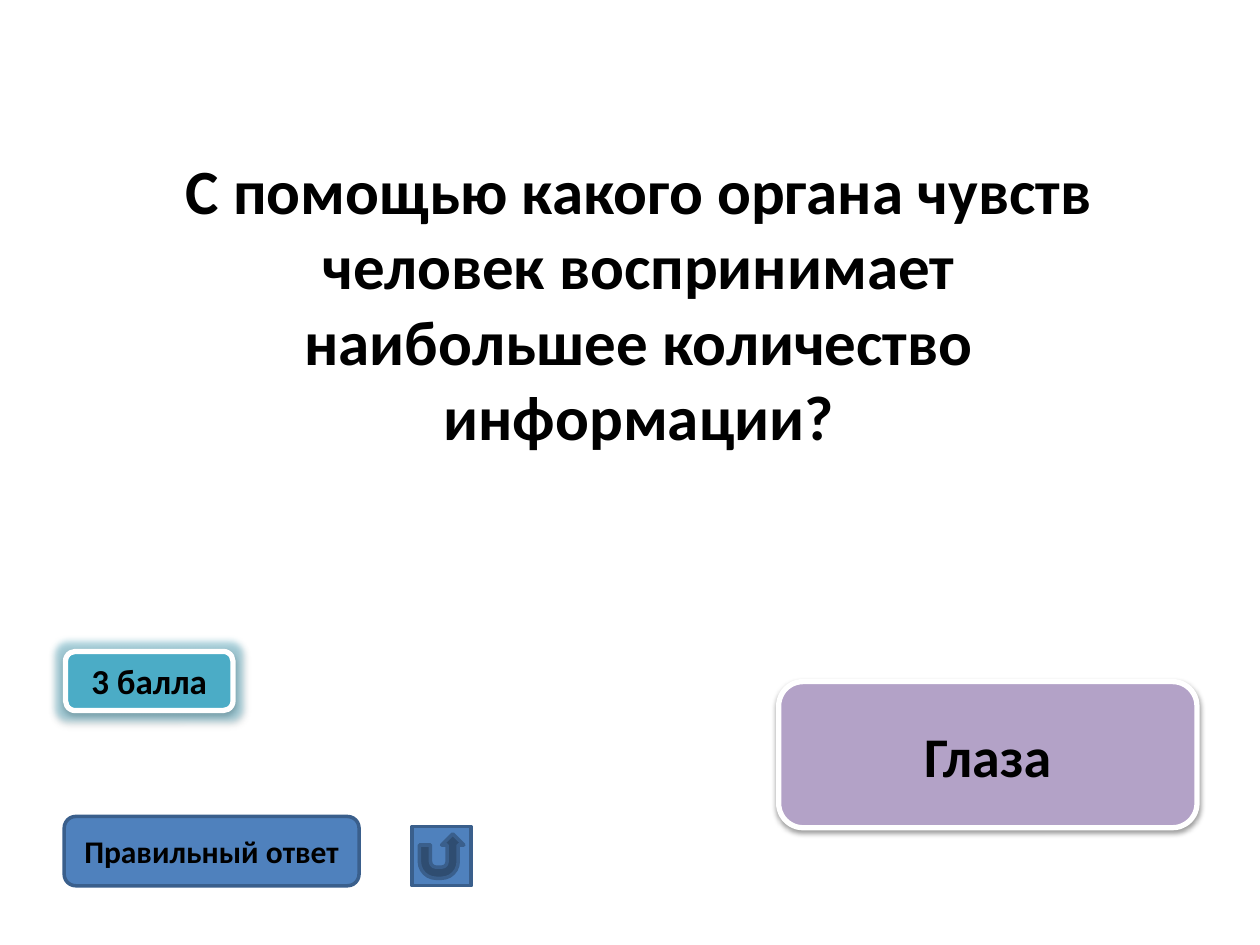
from lxml import etree
from pptx import Presentation
from pptx.dml.color import RGBColor
from pptx.enum import shapes, text
from pptx.oxml import ns
from pptx.util import Inches, Pt

BLACK = RGBColor(0, 0, 0)
WHITE = RGBColor(255, 255, 255)
BLUE = RGBColor(0x4F, 0x81, 0xBD)
NAVY = RGBColor(0x3A, 0x5F, 0x8C)
TEAL = RGBColor(0x4B, 0xAC, 0xC6)
LILAC = RGBColor(0xB3, 0xA2, 0xC7)
ROUND = shapes.MSO_SHAPE.ROUNDED_RECTANGLE
BACK = shapes.MSO_SHAPE.ACTION_BUTTON_RETURN


def write(shape, words, size):
    frame = shape.text_frame
    frame.word_wrap = True
    par = frame.paragraphs[0]
    par.alignment = text.PP_ALIGN.CENTER
    run = par.add_run()
    run.text = words
    for key, value in {"name": "Calibri", "size": Pt(size), "bold": True}.items():
        setattr(run.font, key, value)
    run.font.color.rgb = BLACK


def add_effect(shape, tag, color, alpha, **attrs):
    """Append a glow or shadow to the shape's effect list; glow goes first."""
    effects = shape._element.spPr.find(ns.qn("a:effectLst"))
    effect = etree.SubElement(effects, ns.qn(tag), attrs)
    tint = etree.SubElement(effect, ns.qn("a:srgbClr"), val=str(color))
    etree.SubElement(tint, ns.qn("a:alpha"), val=str(alpha * 1000))


prs = Presentation()
prs.slide_width, prs.slide_height = Inches(10), Inches(7.5)
slide = prs.slides.add_slide(prs.slide_layouts[6])

# kind, box, fill, line, line width, words, size, raised, glowing
parts = [
    (ROUND, (0.51, 6.48, 2.34, 0.55), BLUE, NAVY, 2, "Правильный ответ", 18, False, False),
    (BACK, (3.27, 6.56, 0.47, 0.47), BLUE, NAVY, 2, "", 18, False, False),
    (ROUND, (0.52, 5.17, 1.33, 0.47), TEAL, WHITE, 3, "3 балла", 20, True, True),
    (ROUND, (6.18, 5.41, 3.32, 1.16), LILAC, WHITE, 3, "Глаза", 32, True, False),
]
for kind, box, fill, edge, width, words, size, raised, glowing in parts:
    shape = slide.shapes.add_shape(kind, *map(Inches, box))
    shape.shadow.inherit = False
    shape.fill.solid()
    shape.fill.fore_color.rgb = fill
    shape.line.color.rgb = edge
    shape.line.width = Pt(width)
    if glowing:
        add_effect(shape, "a:glow", fill, 40, rad=str(Pt(8)))
    if raised:
        add_effect(shape, "a:outerShdw", BLACK, 38, blurRad=str(Pt(3.1)),
                   dist=str(Pt(1.6)), dir="5400000", rotWithShape="0")
    if words:
        shape.text_frame.vertical_anchor = text.MSO_ANCHOR.MIDDLE
        write(shape, words, size)

box = slide.shapes.add_textbox(*map(Inches, (1.14, 1.15, 7.86, 2.52)))
write(box, "С помощью какого органа чувств человек воспринимает "
           "наибольшее количество информации?", 36)
box.text_frame.auto_size = text.MSO_AUTO_SIZE.SHAPE_TO_FIT_TEXT

prs.save("out.pptx")
